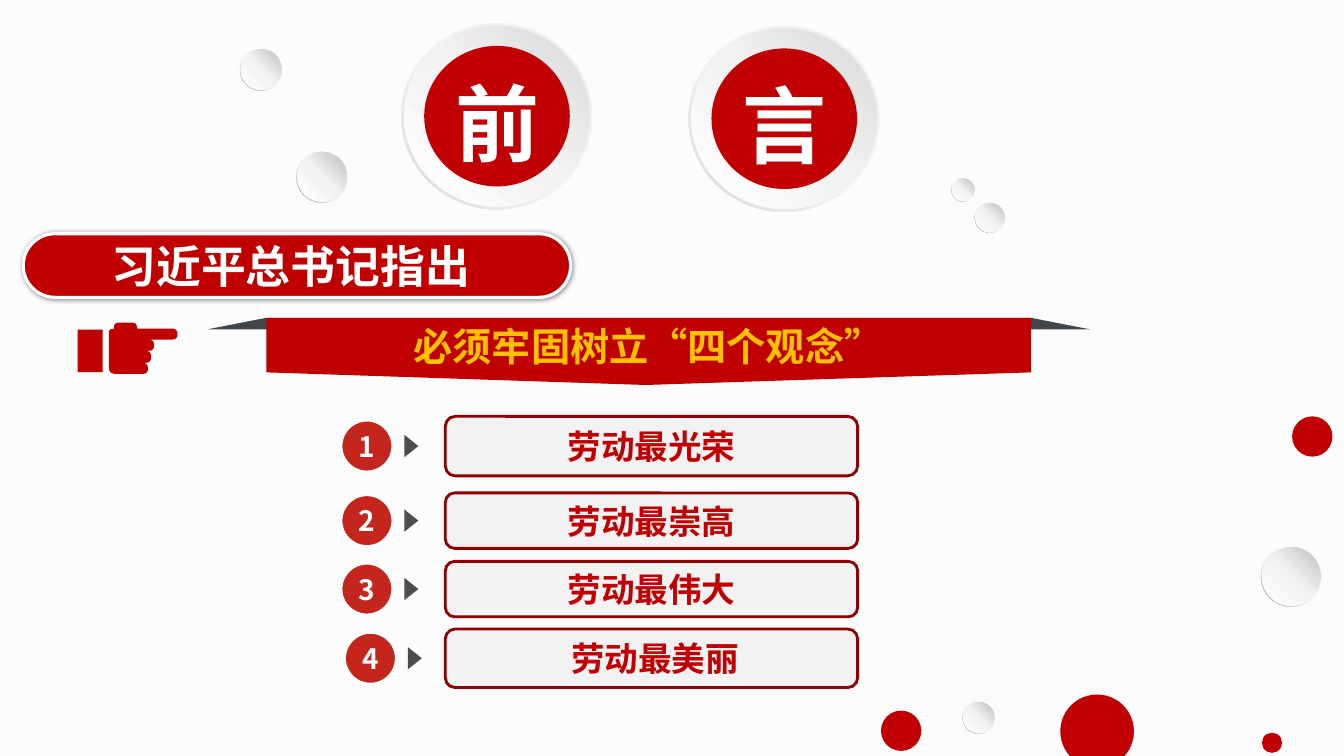
import pptx
import pptx.dml.color
import pptx.enum.shapes
import pptx.enum.text
import pptx.oxml
import pptx.oxml.ns
import pptx.util
import lxml.etree

Pt = pptx.util.Pt
Kind = pptx.enum.shapes.MSO_SHAPE
Align = pptx.enum.text.PP_ALIGN
Anchor = pptx.enum.text.MSO_ANCHOR
qn = pptx.oxml.ns.qn
FACE = "Noto Sans CJK SC"
HUE = {
    "paper": "FCFCFC", "white": "FFFFFF", "mist": "F2F2F2", "rim": "D9D9D9",
    "shade": "BFBFBF", "dusk": "A6A6A6", "red": "C00002", "flag": "C00000",
    "dark": "8E0001", "disc": "C4261D", "gold": "FFC000", "arrow": "4D4D4D",
    "fold": "41464A",
}


def color(name):
    return pptx.dml.color.RGBColor.from_string(HUE[name])


def paint(shape, fill, line=None, width=1):
    shape.shadow.inherit = False
    if isinstance(fill, str):
        shape.fill.solid()
        shape.fill.fore_color.rgb = color(fill)
    else:
        blend(shape, *fill)
    if line:
        shape.line.color.rgb = color(line)
        shape.line.width = Pt(width)
    else:
        shape.line.fill.background()
    return shape


def blend(shape, stops, angle):
    shape.fill.gradient()
    grad = shape._element.spPr.find(qn("a:gradFill"))
    for part in list(grad):
        grad.remove(part)
    bag = lxml.etree.SubElement(grad, qn("a:gsLst"))
    for spot, name in stops:
        stop = lxml.etree.SubElement(bag, qn("a:gs"), pos=str(spot * 1000))
        lxml.etree.SubElement(stop, qn("a:srgbClr"), val=HUE[name])
    lxml.etree.SubElement(grad, qn("a:lin"), ang=str(angle * 60000), scaled="0")


def glow(shape):
    box = shape._element.spPr.find(qn("a:effectLst"))
    cast = lxml.etree.SubElement(box, qn("a:outerShdw"), blurRad="38100", dist="0", algn="ctr")
    tint = lxml.etree.SubElement(cast, qn("a:srgbClr"), val="000000")
    lxml.etree.SubElement(tint, qn("a:alpha"), val="40000")


def draw(slide, kind, x, y, w, h, fill, line=None, width=1):
    shape = slide.shapes.add_shape(kind, Pt(x), Pt(y), Pt(w), Pt(h))
    return paint(shape, fill, line, width)


def trace(slide, points, x, y, fill):
    dots = [(Pt(x + px), Pt(y + py)) for px, py in points]
    pen = slide.shapes.build_freeform(*dots[0], scale=1.0)
    pen.add_line_segments(dots[1:], close=True)
    return paint(pen.convert_to_shape(), fill)


def write(shape, text, size, tint, align=Align.CENTER, anchor=Anchor.MIDDLE):
    frame = shape.text_frame
    frame.word_wrap = True
    frame.vertical_anchor = anchor
    para = frame.paragraphs[0]
    para.text = text
    para.alignment = align
    font = para.font
    font.name = FACE
    font.size = Pt(size)
    font.bold = True
    font.color.rgb = color(tint)
    base = para._p.pPr.find(qn("a:defRPr"))
    lxml.etree.SubElement(base, qn("a:ea"), typeface=FACE)
    return frame


def label(slide, x, y, w, h, *style):
    return write(slide.shapes.add_textbox(Pt(x), Pt(y), Pt(w), Pt(h)), *style)


def knob(slide, x, y, w, h, edge, rim, face):
    ring = draw(slide, Kind.DONUT, x, y, w, h,
                ([(0, edge), (55, "mist"), (100, rim)], 135))
    ring.adjustments[0] = 0.049
    gap = 0.015 * w
    draw(slide, Kind.OVAL, x + gap, y + gap, w - 2 * gap, h - 2 * gap,
         ([(0, "white"), (51, "mist"), (100, face)], 315))


def badge(slide, x, y, w, h, text):
    knob(slide, x, y, w, h, "mist", "rim", "rim")
    gap = 16.4
    draw(slide, Kind.OVAL, x + gap, y + gap, w - 2 * gap, h - 2 * gap, "red")
    label(slide, x + 31.7, y + 31, 100, 80, text, 60, "white", Align.LEFT, Anchor.TOP)


def decor(slide):
    for x, y, d in [(211.7, 108, 36.7), (679.7, 127.4, 16.6), (696.2, 144.7, 21.6),
                    (687.6, 501.1, 23), (171.4, 34.6, 30.2), (900.7, 390.2, 43.2)]:
        knob(slide, x, y, d, d, "white", "dusk", "shade")
    for x, y, d in [(757.4, 496.1, 52.6), (923, 297.4, 28.8),
                    (629.3, 507.6, 28.8), (901.4, 523.4, 14.4)]:
        draw(slide, Kind.OVAL, x, y, d, d, "red")


def pill(slide, x, y, w, h):
    shape = draw(slide, Kind.ROUNDED_RECTANGLE, x, y, w, h, "flag", "white", 2.25)
    shape.adjustments[0] = 0.5
    glow(shape)
    label(slide, x + 43.9, y, 294.5, h, "习近平总书记指出", 32, "white")


def bend(corners):
    points = []
    for i, (x, y, r) in enumerate(corners):
        if not r:
            points.append((x, y))
            continue
        ends = []
        for ox, oy, _ in (corners[i - 1], corners[(i + 1) % len(corners)]):
            far = ((ox - x) ** 2 + (oy - y) ** 2) ** 0.5
            ends.append((x + (ox - x) * r / far, y + (oy - y) * r / far))
        (ax, ay), (bx, by) = ends
        for t in (0, 0.2, 0.4, 0.6, 0.8, 1):
            u = 1 - t
            points.append((u * u * ax + 2 * u * t * x + t * t * bx,
                           u * u * ay + 2 * u * t * y + t * t * by))
    return points


def hand(slide, x, y):
    draw(slide, Kind.RECTANGLE, x, y + 5, 18, 30.5, "flag")
    corners = [(3.6, 0, 4), (20.2, 0, 4), (20.2, 4.3, 0), (49, 4.3, 3.9),
               (49, 12.2, 3.9), (28, 12.2, 0), (32.4, 12.2, 4), (32.4, 20.2, 4),
               (26.2, 20.2, 0), (30.2, 20.2, 4), (30.2, 28.8, 4), (24, 28.8, 0),
               (28, 28.8, 3.9), (28, 36.7, 3.9), (0, 36.7, 5), (0, 4.5, 3),
               (3.6, 4.5, 0)]
    trace(slide, bend(corners), x + 22.3, y, "flag")


def banner(slide, x, y, w, h):
    wing = 42
    right = w - wing
    trace(slide, [(wing, 0), (right, 0), (w, 8.2), (0, 8.2)], x, y, "fold")
    flag = trace(slide, [(wing, 0), (right, 0), (right, h - 9), (w / 2 - 2, h),
                         (wing, h - 9)], x, y, "flag")
    write(flag, "必须牢固树立“四个观念”", 28, "gold", anchor=Anchor.TOP)


def row(slide, x, y, h, digit, text, shift):
    d = 36
    mid = y + h / 2
    left = x + shift
    disc = draw(slide, Kind.OVAL, left, mid - d / 2, d, d, "disc", "white")
    frame = write(disc, digit, 20, "white")
    frame.margin_left = frame.margin_right = 0
    frame.margin_top = frame.margin_bottom = 0
    tip = draw(slide, Kind.ISOSCELES_TRIANGLE, left + 41.7, mid - 5, 16, 10, "arrow")
    tip.rotation = 90
    card = draw(slide, Kind.ROUNDED_RECTANGLE, x + 74, y, 294.5, h, "mist", "dark", 2)
    frame = write(card, text, 24, "red")
    frame.margin_left = Pt(7.2 + 2 * shift)


def main():
    deck = pptx.Presentation()
    deck.slide_width, deck.slide_height = Pt(960), Pt(540)
    slide = deck.slides.add_slide(deck.slide_layouts[6])
    slide.background.fill.solid()
    slide.background.fill.fore_color.rgb = color("paper")
    decor(slide)
    badge(slide, 286.6, 16.4, 136.8, 133.2, "前")
    badge(slide, 491.8, 18.2, 136.8, 133.2, "言")
    pill(slide, 16.6, 167, 391, 45.4)
    hand(slide, 55.4, 230.4)
    banner(slide, 148.3, 227, 630, 48)
    rows = [(297.4, 42.5, "劳动最光荣", 0), (352.1, 39.6, "劳动最崇高", 0),
            (401, 39.6, "劳动最伟大", 0), (449.3, 41.8, "劳动最美丽", 2.5)]
    for i, (y, h, text, shift) in enumerate(rows, 1):
        row(slide, 244.1, y, h, str(i), text, shift)
    deck.save("out.pptx")


if __name__ == "__main__":
    main()
